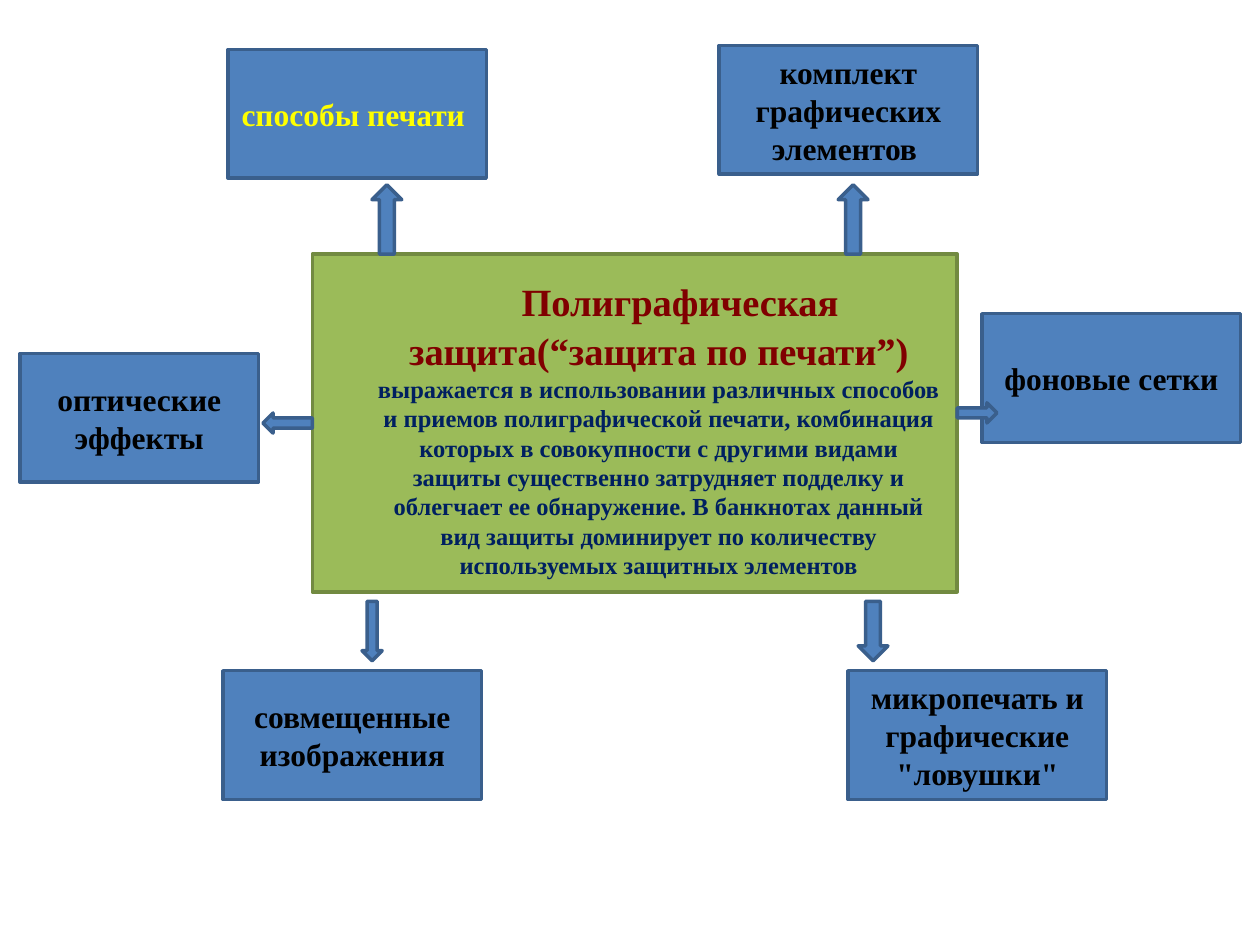
from pptx import Presentation
from pptx.dml.color import RGBColor
from pptx.enum.shapes import MSO_SHAPE
from pptx.enum.text import MSO_ANCHOR, PP_ALIGN
from pptx.util import Pt

BLUE = RGBColor(0x4F, 0x81, 0xBD)
BLUE_EDGE = RGBColor(0x3A, 0x5F, 0x8C)
GREEN = RGBColor(0x9B, 0xBB, 0x59)
GREEN_EDGE = RGBColor(0x72, 0x8A, 0x41)
YELLOW = RGBColor(0xFF, 0xFF, 0x00)
BLACK = RGBColor(0, 0, 0)
MAROON = RGBColor(0x80, 0, 0)
NAVY = RGBColor(0, 0x20, 0x60)
SERIF = "Times New Roman"

prs = Presentation()
prs.slide_width, prs.slide_height = Pt(720), Pt(540)
s = prs.slides.add_slide(prs.slide_layouts[6])


def add_block(kind, left, top, width, height, fill=BLUE, edge=BLUE_EDGE):
    sp = s.shapes.add_shape(kind, Pt(left), Pt(top), Pt(width), Pt(height))
    sp.shadow.inherit = False
    sp.fill.solid()
    sp.fill.fore_color.rgb = fill
    sp.line.color.rgb = edge
    sp.line.width = Pt(2)
    return sp


# Central definition
sp = add_block(MSO_SHAPE.RECTANGLE, 178.5, 145.2, 368.5, 193, GREEN, GREEN_EDGE)
tf = sp.text_frame
tf.word_wrap = True
tf.vertical_anchor = MSO_ANCHOR.TOP
p = tf.paragraphs[0]
p.alignment = PP_ALIGN.CENTER
pPr = p._p.get_or_add_pPr()
pPr.set("marL", str(Pt(27.4)))
pPr.set("indent", str(Pt(17)))
p.font.bold = True
for text, size, font, color in [
    (" ", 32, "Calibri", YELLOW),
    ("Полиграфическая защита(“защита по печати”) ", 22, SERIF, MAROON),
    ("выражается в использовании различных способов и приемов "
     "полиграфической печати, комбинация которых в совокупности с другими "
     "видами защиты существенно затрудняет подделку и облегчает ее "
     "обнаружение. В банкнотах данный вид защиты доминирует по количеству "
     "используемых защитных элементов", 14, SERIF, NAVY),
]:
    r = p.add_run()
    r.text = text
    r.font.size = Pt(size)
    r.font.name = font
    r.font.bold = True
    r.font.color.rgb = color

# Kinds of protection around it
BOX_W, BOX_H = 147.6, 73.6
for text, left, top, width, color in [
    ("способы печати ", 130.3, 28.3, BOX_W, YELLOW),
    ("комплект графических элементов ", 411, 26, BOX_W, BLACK),
    ("фоновые сетки", 561.3, 179.3, BOX_W, BLACK),
    ('микропечать и графические "ловушки"', 484.7, 383.3, BOX_W, BLACK),
    ("совмещенные изображения", 127.5, 383.3, BOX_W, BLACK),
    ("оптические эффекты", 11.5, 202, 136.2, BLACK),
]:
    sp = add_block(MSO_SHAPE.RECTANGLE, left, top, width, BOX_H)
    tf = sp.text_frame
    tf.word_wrap = True
    tf.vertical_anchor = MSO_ANCHOR.MIDDLE
    p = tf.paragraphs[0]
    p.text = text
    p.alignment = PP_ALIGN.CENTER
    p.font.size = Pt(18)
    p.font.name = SERIF
    p.font.bold = True
    p.font.color.rgb = color

# Arrows from the definition to each kind
for kind, left, top, width, height in [
    (MSO_SHAPE.LEFT_ARROW, 150.3, 236, 28.3, 11.5),
    (MSO_SHAPE.RIGHT_ARROW, 547, 230.2, 22.7, 11.5),
    (MSO_SHAPE.UP_ARROW, 212.6, 105.6, 17, 39.6),
    (MSO_SHAPE.UP_ARROW, 479, 105.6, 17, 39.6),
    (MSO_SHAPE.DOWN_ARROW, 206.9, 343.6, 11.5, 34),
    (MSO_SHAPE.DOWN_ARROW, 490.4, 343.6, 17, 34),
]:
    add_block(kind, left, top, width, height)

prs.save("out.pptx")
